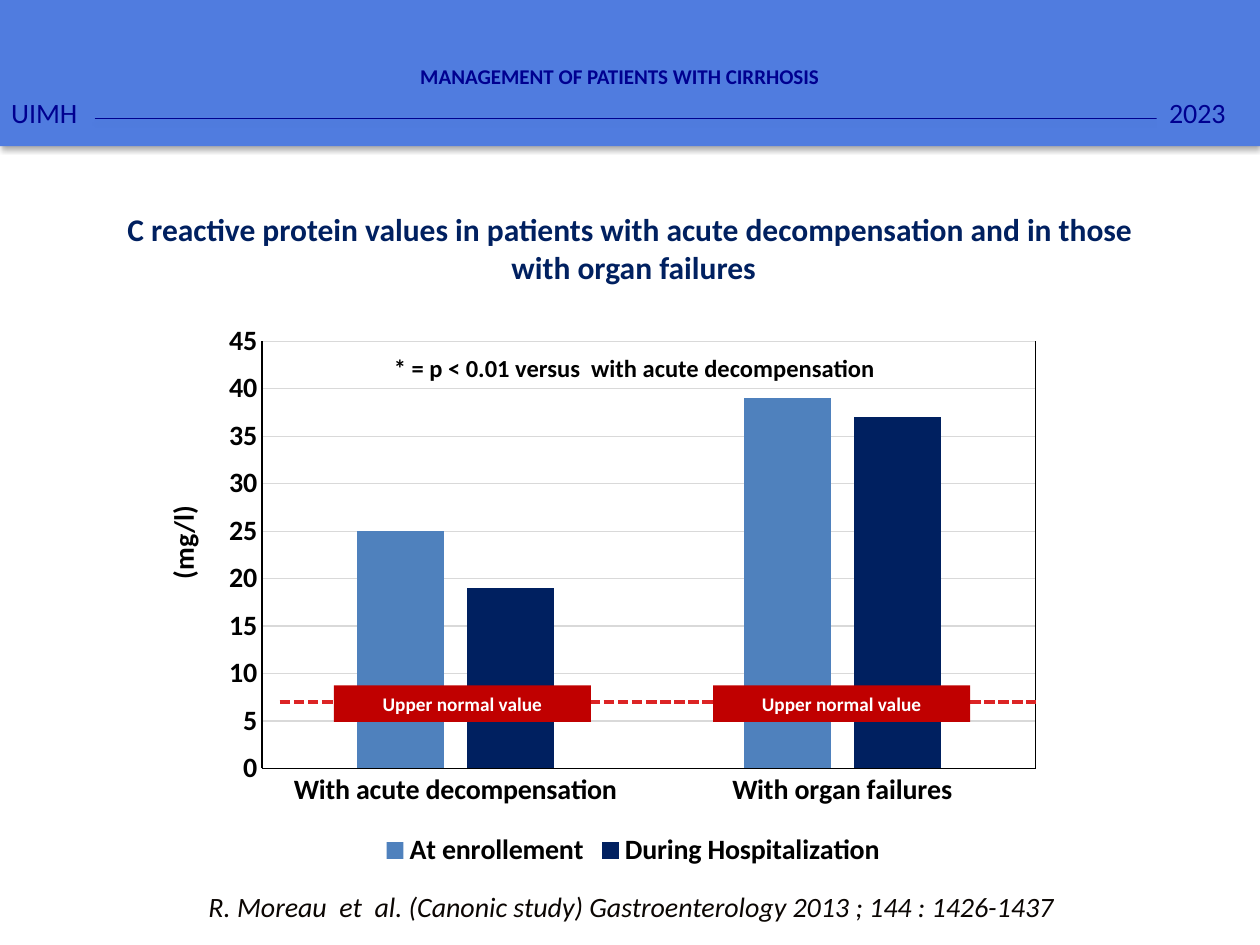
import dataclasses
import lxml.etree
import pptx
import pptx.chart.data
import pptx.dml.color
import pptx.enum.chart
import pptx.enum.dml
import pptx.enum.shapes
import pptx.enum.text
import pptx.oxml.ns
import pptx.util

COLS, ROWS = 100, 75
FONT = "Calibri"
BLUE, NAVY, DEEP, RED, BLACK = "507CDF", "000090", "002060", "C00000", "000000"
MID = pptx.enum.text.MSO_ANCHOR.MIDDLE
LOW = pptx.enum.text.MSO_ANCHOR.BOTTOM
LEFT = pptx.enum.text.PP_ALIGN.LEFT
MEAN = pptx.enum.text.PP_ALIGN.CENTER

deck = pptx.Presentation()
deck.slide_width = pptx.util.Inches(10)
deck.slide_height = pptx.util.Inches(7.5)
slide = deck.slides.add_slide(deck.slide_layouts[5])


@dataclasses.dataclass
class Label:
    text: str
    box: tuple
    size: int
    hue: str
    fill: str = ""
    bold: bool = True
    slant: bool = False
    side: int = MEAN
    hold: int = MID
    turn: int = 0


@dataclasses.dataclass
class Rule:
    start: tuple
    end: tuple
    hue: str
    width: float = 0.75
    dash: bool = False
    shade: int = 0


def tint(code: str):
    return pptx.dml.color.RGBColor.from_string(code)


def across(col: float) -> int:
    return round(deck.slide_width * col / COLS)


def down(row: float) -> int:
    return round(deck.slide_height * row / ROWS)


def place(box: tuple) -> tuple:
    left, top, width, height = box
    return across(left), down(top), across(width), down(height)


def add(parent, tag: str, **traits):
    return lxml.etree.SubElement(parent, pptx.oxml.ns.qn(tag), **traits)


def cast(effects, shade: int, drop: float) -> None:
    outer = add(effects, "a:outerShdw", blurRad=str(pptx.util.Pt(3.1)),
                dist=str(pptx.util.Pt(drop)), dir="5400000", rotWithShape="0")
    black = add(outer, "a:srgbClr", val=BLACK)
    add(black, "a:alpha", val=str(shade * 1000))


def style(font, size: int, hue: str, bold: bool = True) -> None:
    font.name, font.size, font.bold = FONT, pptx.util.Pt(size), bold
    font.color.rgb = tint(hue)


def write(shape, label: Label) -> None:
    shape.rotation = label.turn
    frame = shape.text_frame
    frame.word_wrap = True
    frame.auto_size = pptx.enum.text.MSO_AUTO_SIZE.NONE
    frame.vertical_anchor = label.hold
    para = frame.paragraphs[0]
    para.alignment = label.side
    run = para.add_run()
    run.text = label.text
    style(run.font, label.size, label.hue, label.bold)
    run.font.italic = label.slant


def block(box: tuple, fill: str):
    shape = slide.shapes.add_shape(
        pptx.enum.shapes.MSO_SHAPE.RECTANGLE, *place(box))
    shape.shadow.inherit = False
    shape.fill.solid()
    shape.fill.fore_color.rgb = tint(fill)
    shape.line.fill.background()
    return shape


def draw(label: Label) -> None:
    if label.fill:
        shape = block(label.box, label.fill)
    else:
        shape = slide.shapes.add_textbox(*place(label.box))
    write(shape, label)


def rule(line: Rule) -> None:
    (left, top), (right, base) = line.start, line.end
    link = slide.shapes.add_connector(
        pptx.enum.shapes.MSO_CONNECTOR.STRAIGHT,
        across(left), down(top), across(right), down(base))
    link.line.color.rgb = tint(line.hue)
    link.line.width = pptx.util.Pt(line.width)
    if line.dash:
        link.line.dash_style = pptx.enum.dml.MSO_LINE.SQUARE_DOT
    effects = add(link._element.spPr, "a:effectLst")
    if line.shade:
        cast(effects, line.shade, 1.6)


def stroke(line, hue: str) -> None:
    line.color.rgb = tint(hue)
    line.width = pptx.util.Pt(0.75)


def graph(box: tuple, plot: tuple) -> None:
    data = pptx.chart.data.CategoryChartData()
    data.categories = ["With acute decompensation", "With organ failures"]
    data.add_series("At enrollement", (25, 39))
    data.add_series("During Hospitalization", (19, 37))
    chart = slide.shapes.add_chart(
        pptx.enum.chart.XL_CHART_TYPE.COLUMN_CLUSTERED, *place(box), data).chart
    style(chart.font, 16, BLACK)
    chart.has_title = False
    chart.has_legend = True
    chart.legend.position = pptx.enum.chart.XL_LEGEND_POSITION.BOTTOM
    chart.legend.include_in_layout = False
    style(chart.legend.font, 16, BLACK)
    bars = chart.plots[0]
    bars.gap_width, bars.overlap, bars.vary_by_categories = 219, -27, False
    for series, hue in zip(bars.series, ("4F81BD", DEEP)):
        series.format.fill.solid()
        series.format.fill.fore_color.rgb = tint(hue)
    for axis in (chart.category_axis, chart.value_axis):
        axis.major_tick_mark = pptx.enum.chart.XL_TICK_MARK.NONE
        axis.minor_tick_mark = pptx.enum.chart.XL_TICK_MARK.NONE
        style(axis.tick_labels.font, 16, BLACK)
        stroke(axis.format.line, BLACK)
    scale = chart.value_axis
    scale.minimum_scale, scale.maximum_scale, scale.major_unit = 0, 45, 5
    stroke(scale.major_gridlines.format.line, "D9D9D9")

    area = chart._chartSpace.chart.plotArea
    for old in area.findall(pptx.oxml.ns.qn("c:layout")):
        area.remove(old)
    layout = add(area, "c:layout")
    area.insert(0, layout)
    frame = add(layout, "c:manualLayout")
    add(frame, "c:layoutTarget", val="inner")
    add(frame, "c:xMode", val="edge")
    add(frame, "c:yMode", val="edge")
    shares = ((plot[0] - box[0]) / box[2], (plot[1] - box[1]) / box[3],
              plot[2] / box[2], plot[3] / box[3])
    for tag, share in zip("xywh", shares):
        add(frame, "c:" + tag, val=f"{share:.4f}")


def main() -> None:
    band = block((0, 0, COLS, 11.6), BLUE)
    cast(band._element.spPr.find(pptx.oxml.ns.qn("a:effectLst")), 35, 1.8)
    rule(Rule((7.5, 9.4), (91.8, 9.4), NAVY, shade=38))
    for text, left, width in (("2023", 91.8, 8.2), ("UIMH", -0.1, 7.3)):
        draw(Label(text, (left, 7.1, width, 3.7), 16, NAVY, BLUE,
                   bold=False, side=LEFT))
    draw(Label("MANAGEMENT OF PATIENTS WITH CIRRHOSIS", (6.7, 0.2, 85, 7.3),
               12, NAVY, BLUE, hold=LOW))

    title = Label("C reactive protein values in patients with acute "
                  "decompensation and in those  with organ failures",
                  (8.3, 16.1, 84, 7.1), 18, DEEP)
    head = slide.shapes.title
    head.left, head.top, head.width, head.height = place(title.box)
    write(head, title)

    plot = (20.8, 27.1, 61.4, 33.9)
    edge, base = plot[0] + plot[2], plot[1] + plot[3]
    graph((16.9, 24.9, 66.7, 44.4), plot)
    rule(Rule((edge, plot[1]), (edge, base), BLACK))
    norm = base - plot[3] * 7 / 45
    rule(Rule((22.2, norm), (edge, norm), "DC2425", 2, dash=True))
    for left in (26.5, 56.6):
        draw(Label("Upper normal value", (left, 54.4, 20.4, 2.9),
                   11, "FFFFFF", RED))

    draw(Label("R. Moreau  et  al. (Canonic study) Gastroenterology 2013 ; "
               "144 : 1426-1437", (14, 70.1, 72.2, 3.7), 16, "0B0603",
               bold=False, slant=True))
    draw(Label("* = p < 0.01 versus  with acute decompensation",
               (28.7, 27.5, 43.3, 3.4), 14, BLACK))
    draw(Label("(mg/l)", (6.8, 41.2, 15.4, 3.7), 16, BLACK, turn=270))
    deck.save("out.pptx")


if __name__ == "__main__":
    main()
